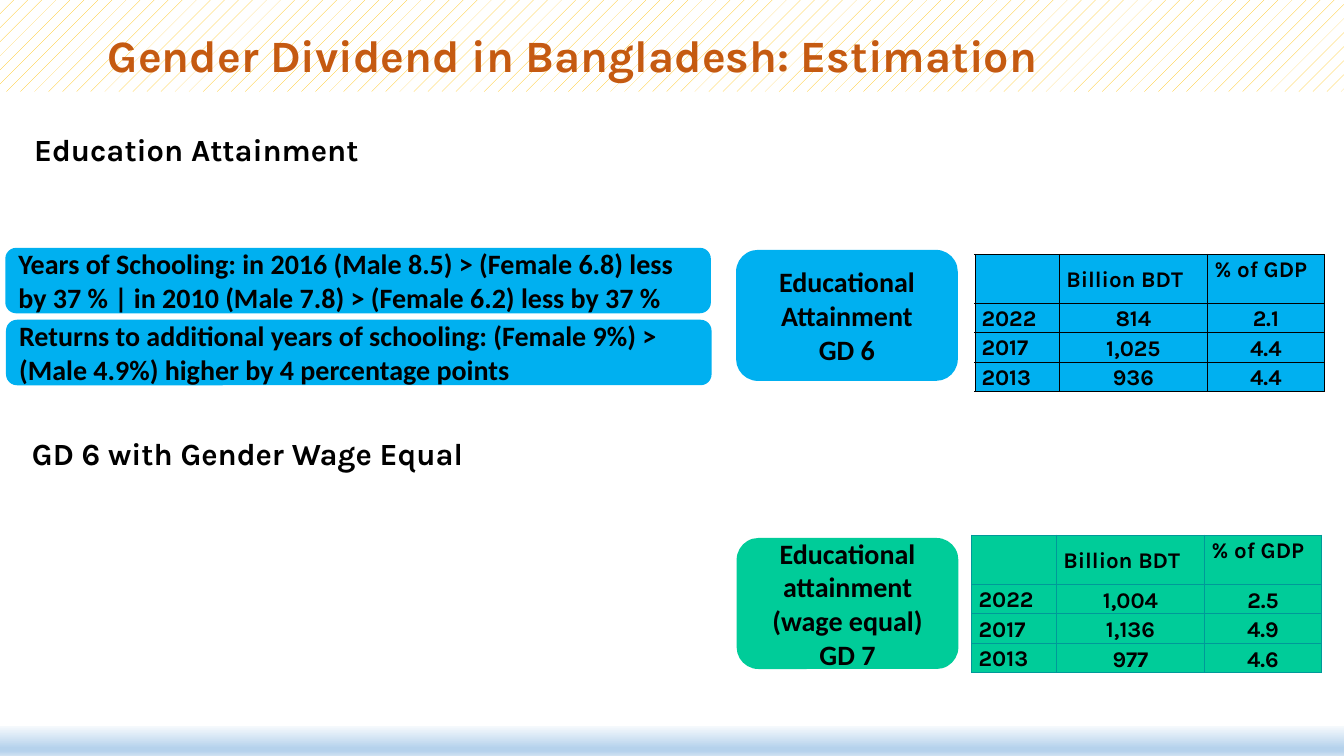
"""Builds the slide on the gender dividend estimates for Bangladesh."""
from copy import deepcopy
from dataclasses import dataclass

from lxml import etree
from pptx import Presentation
from pptx.dml.color import RGBColor
from pptx.enum import dml, shapes, text
from pptx.oxml import ns
from pptx.util import Pt

BLACK = RGBColor(0x00, 0x00, 0x00)
WHITE = RGBColor(0xFF, 0xFF, 0xFF)
GOLD = RGBColor(0xFF, 0xC0, 0x00)
RUST = RGBColor(0xC5, 0x5A, 0x11)
SKY = RGBColor(0x00, 0xB0, 0xF0)
MINT = RGBColor(0x00, 0xCC, 0x99)
TEAL = RGBColor(0x00, 0x99, 0x99)
FOOTER_STOPS = [
    (0, RGBColor(0xF7, 0xFA, 0xFD)),
    (0.74, RGBColor(0xB5, 0xD2, 0xEC)),
    (0.83, RGBColor(0xB5, 0xD2, 0xEC)),
    (1, RGBColor(0xCE, 0xE1, 0xF2)),
]

SLIDE_W, SLIDE_H = 960, 540
FOOTER_H = 21.6
COLUMN_WIDTHS = [60.5, 105.8, 83.5]
HEADER_H, ROW_H = 35, 20.5
HEADER = ["", "Billion BDT", "% of GDP"]
LEFT, CENTER, JUSTIFY = text.PP_ALIGN.LEFT, text.PP_ALIGN.CENTER, text.PP_ALIGN.JUSTIFY


@dataclass
class Label:
    x: float
    y: float
    w: float
    h: float
    words: str
    size: float
    color: RGBColor
    align: text.PP_ALIGN


@dataclass
class Card:
    x: float
    y: float
    w: float
    h: float
    lines: list[str]
    color: RGBColor
    align: text.PP_ALIGN


@dataclass
class Estimates:
    x: float
    y: float
    fill: RGBColor
    border: RGBColor
    border_width: float
    rows: list[list[str]]


LABELS = [
    Label(9.4, 5.8, 800, 67, "Gender Dividend in Bangladesh: Estimation", 32, RUST, CENTER),
    Label(17.3, 90, 892, 33.8, "Education Attainment", 22, BLACK, JUSTIFY),
    Label(15.8, 306.7, 892, 33.8, "GD 6 with Gender Wage Equal", 22, BLACK, JUSTIFY),
]
CARDS = [
    Card(3.8, 177, 504, 46.8,
         ["Years of Schooling: in 2016 (Male 8.5) > (Female 6.8) less by 37 % "
          "| in 2010 (Male 7.8) > (Female 6.2) less by 37 %"], SKY, LEFT),
    Card(4.3, 228.4, 504, 46.8,
         ["Returns to additional years of schooling: (Female 9%) > (Male 4.9%) "
          "higher by 4 percentage points"], SKY, LEFT),
    Card(525.8, 178.5, 158.4, 93.6, ["Educational Attainment", "GD 6"], SKY, CENTER),
    Card(526.2, 384.3, 158.4, 93.6,
         ["Educational attainment (wage equal)", "GD 7"], MINT, CENTER),
]
TABLES = [
    Estimates(696.2, 181.4, SKY, BLACK, 0.25,
              [["2022", "814", "2.1"], ["2017", "1,025", "4.4"], ["2013", "936", "4.4"]]),
    Estimates(694.1, 382.3, MINT, TEAL, 1,
              [["2022", "1,004", "2.5"], ["2017", "1,136", "4.9"], ["2013", "977", "4.6"]]),
]


def set_font(p, name: str, size: float, color: RGBColor) -> None:
    p.font.name = name
    p.font.size = Pt(size)
    p.font.bold = True
    p.font.color.rgb = color


def add_plain_shape(slide, kind, x: float, y: float, w: float, h: float):
    s = slide.shapes.add_shape(kind, Pt(x), Pt(y), Pt(w), Pt(h))
    s.shadow.inherit = False
    s.line.fill.background()
    return s


def add_bands(slide) -> None:
    rect = shapes.MSO_SHAPE.RECTANGLE
    top = add_plain_shape(slide, rect, 0, 0, SLIDE_W, 65.5)
    top.fill.patterned()
    top.fill.pattern = dml.MSO_PATTERN.PERCENT_5
    top.fill.fore_color.rgb = GOLD
    top.fill.back_color.rgb = WHITE

    footer = add_plain_shape(slide, rect, 0, SLIDE_H - FOOTER_H, SLIDE_W, FOOTER_H)
    footer.fill.gradient()
    footer.fill.gradient_angle = 270
    stop_list = footer._element.spPr.find(".//" + ns.qn("a:gsLst"))
    while len(stop_list) < len(FOOTER_STOPS):
        stop_list.append(deepcopy(stop_list[0]))
    for stop, (position, color) in zip(footer.fill.gradient_stops, FOOTER_STOPS):
        stop.position = position
        stop.color.rgb = color


def add_label(slide, label: Label) -> None:
    s = slide.shapes.add_textbox(Pt(label.x), Pt(label.y), Pt(label.w), Pt(label.h))
    tf = s.text_frame
    tf.word_wrap = True
    tf.vertical_anchor = text.MSO_ANCHOR.MIDDLE
    p = tf.paragraphs[0]
    p.text = label.words
    p.alignment = label.align
    set_font(p, "Karla", label.size, label.color)


def add_card(slide, card: Card) -> None:
    s = add_plain_shape(slide, shapes.MSO_SHAPE.ROUNDED_RECTANGLE, card.x, card.y, card.w, card.h)
    s.fill.solid()
    s.fill.fore_color.rgb = card.color
    tf = s.text_frame
    tf.word_wrap = True
    tf.vertical_anchor = text.MSO_ANCHOR.MIDDLE
    tf.text = "\n".join(card.lines)
    for p in tf.paragraphs:
        p.alignment = card.align
        set_font(p, "Calibri", 20, BLACK)


def set_borders(cell, color: RGBColor, width: float) -> None:
    tc_pr = cell._tc.get_or_add_tcPr()
    for i, side in enumerate(("a:lnL", "a:lnR", "a:lnT", "a:lnB")):
        line = etree.Element(ns.qn(side), w=str(Pt(width)))
        fill = etree.SubElement(line, ns.qn("a:solidFill"))
        etree.SubElement(fill, ns.qn("a:srgbClr"), val=str(color))
        tc_pr.insert(i, line)


def add_estimates(slide, est: Estimates) -> None:
    grid = [HEADER] + est.rows
    heights = [HEADER_H] + [ROW_H] * len(est.rows)
    table = slide.shapes.add_table(
        len(grid), len(HEADER), Pt(est.x), Pt(est.y), Pt(sum(COLUMN_WIDTHS)), Pt(sum(heights))
    ).table
    table.first_row = table.horz_banding = False
    for column, width in zip(table.columns, COLUMN_WIDTHS):
        column.width = Pt(width)
    for i, (row, height) in enumerate(zip(grid, heights)):
        table.rows[i].height = Pt(height)
        for j, words in enumerate(row):
            cell = table.cell(i, j)
            cell.fill.solid()
            cell.fill.fore_color.rgb = est.fill
            set_borders(cell, est.border, est.border_width)
            cell.margin_left = cell.margin_right = Pt(5)
            cell.margin_top = cell.margin_bottom = 0
            if i > 0:
                cell.vertical_anchor = text.MSO_ANCHOR.BOTTOM if j else text.MSO_ANCHOR.MIDDLE
            p = cell.text_frame.paragraphs[0]
            p.text = words
            p.alignment = CENTER if i and j else JUSTIFY
            p.line_spacing = 1.5 if (i, j) == (0, 1) else 1.1
            set_font(p, "Karla", 16, BLACK)


def main() -> None:
    prs = Presentation()
    prs.slide_width, prs.slide_height = Pt(SLIDE_W), Pt(SLIDE_H)
    slide = prs.slides.add_slide(prs.slide_layouts[6])
    add_bands(slide)
    for label in LABELS:
        add_label(slide, label)
    for card in CARDS:
        add_card(slide, card)
    for est in TABLES:
        add_estimates(slide, est)
    prs.save("out.pptx")


if __name__ == "__main__":
    main()
